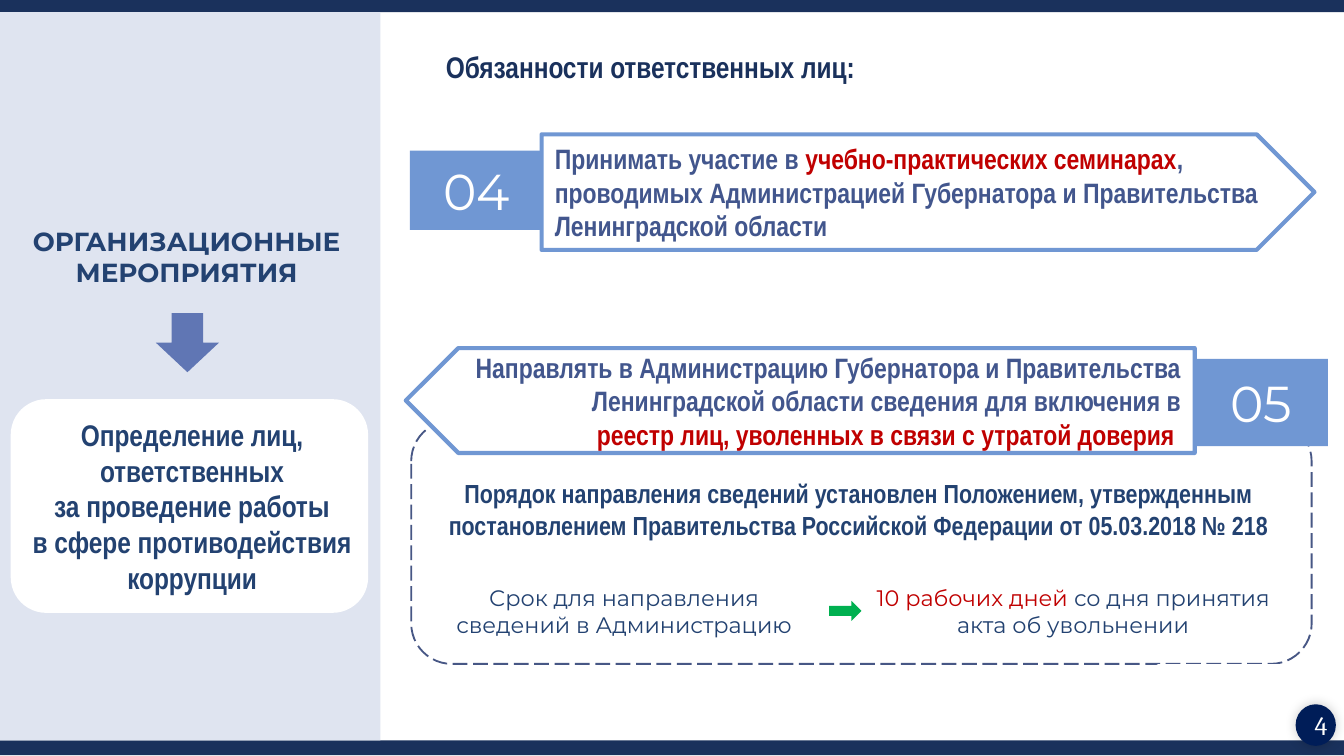
from lxml.etree import SubElement
from pptx import Presentation
from pptx.dml.color import RGBColor
from pptx.enum.dml import MSO_LINE
from pptx.enum.shapes import MSO_SHAPE as SHAPE
from pptx.enum.text import MSO_ANCHOR as ANCHOR, PP_ALIGN as ALIGN
from pptx.oxml.ns import qn
from pptx.util import Inches, Pt

COLORS = {
    "navy": "1A315C", "panel": "DFE4F0", "white": "FFFFFF", "blue": "7097D3",
    "text": "234271", "duty": "42568D", "red": "C00000", "dash": "475785",
    "green": "00B050", "arrow": "6076B4", "badge": "001D58", "black": "000000",
}
NARROW, MONTSERRAT = "Arial Narrow", "Montserrat"


def add_shape(kind, box, fill=None, line=None, width=1):
    shape = slide.shapes.add_shape(kind, *[Inches(value) for value in box])
    shape.shadow.inherit = False
    if fill:
        shape.fill.solid()
        shape.fill.fore_color.rgb = RGBColor.from_string(COLORS[fill])
    else:
        shape.fill.background()
    if line:
        shape.line.color.rgb = RGBColor.from_string(COLORS[line])
        shape.line.width = Pt(width)
    else:
        shape.line.fill.background()
    return shape


def write(shape, runs, size, font=NARROW, bold=False, align=ALIGN.CENTER,
          anchor=ANCHOR.MIDDLE, inset=(0.1, 0.05)):
    frame = shape.text_frame
    side, edge = Inches(inset[0]), Inches(inset[1])
    frame_format = {"word_wrap": True, "vertical_anchor": anchor,
                    "margin_left": side, "margin_right": side,
                    "margin_top": edge, "margin_bottom": edge}
    for name, value in frame_format.items():
        setattr(frame, name, value)
    paragraph = frame.paragraphs[0]
    paragraph.alignment = align
    for text, color in runs:
        for index, part in enumerate(text.split("\n")):
            if index:
                paragraph.add_line_break()
            if not part:
                continue
            run = paragraph.add_run()
            run.text = part
            for name, value in {"size": Pt(size), "name": font, "bold": bold}.items():
                setattr(run.font, name, value)
            run.font.color.rgb = RGBColor.from_string(COLORS[color])


# Widescreen page, 16:9
presentation = Presentation()
presentation.slide_width = Inches(10)
presentation.slide_height = Inches(10) * 9 // 16
slide = presentation.slides.add_slide(presentation.slide_layouts[5])

# Top and bottom bars, dashed frame, left panel
for top in (-0.02, 5.51):
    add_shape(SHAPE.RECTANGLE, (0, top, 10, 0.11), "navy")
frame_shape = add_shape(SHAPE.ROUNDED_RECTANGLE, (3.06, 3.13, 6.7, 1.81), line="dash")
frame_shape.line.dash_style = MSO_LINE.LONG_DASH
add_shape(SHAPE.RECTANGLE, (-0.01, 0.09, 2.84, 5.42), "panel")

# Title
title = slide.shapes.title
title_box = {"left": 2.83, "top": 0.37, "width": 4.02, "height": 0.31}
for name, value in title_box.items():
    setattr(title, name, Inches(value))
write(title, [("Обязанности ответственных лиц:", "navy")], 16, bold=True,
      anchor=ANCHOR.BOTTOM)

# Left panel: heading, arrow, topic
add_shape(SHAPE.ROUNDED_RECTANGLE, (0.08, 2.97, 2.66, 1.59), "white")
add_shape(SHAPE.DOWN_ARROW, (1.16, 2.33, 0.47, 0.44), "arrow")

topic = ("Определение лиц, ответственных\nза проведение работы\n"
         "в сфере противодействия коррупции")
procedure = ("Порядок направления сведений установлен Положением, утвержденным "
             "постановлением Правительства Российской Федерации от 05.03.2018 № 218")
text_boxes = [
    ((0.06, 0.69, 2.66, 2.44), "ОРГАНИЗАЦИОННЫЕ МЕРОПРИЯТИЯ", 14, MONTSERRAT, ANCHOR.MIDDLE),
    ((0.1, 2.97, 2.66, 1.59), topic, 16, NARROW, ANCHOR.MIDDLE),
    ((3.02, 3.6, 6.74, 0.47), procedure, 14, NARROW, ANCHOR.BOTTOM),
]
for box, text, size, font, anchor in text_boxes:
    text_box = slide.shapes.add_textbox(*[Inches(value) for value in box])
    write(text_box, [(text, "text")], size, font, bold=True, anchor=anchor)

# White patch over the lower right corner of the frame
add_shape(SHAPE.RECTANGLE, (8.62, 4.96, 0.99, 0.43), "white", "white", 2.25)

# Numbered duties
duties = [
    ("04", (3.05, 1.12, 0.99, 0.59), (4.03, 1, 5.75, 0.86), ALIGN.LEFT,
     [("Принимать участие в ", "duty"),
      ("учебно-практических семинарах", "red"),
      (", проводимых Администрацией Губернатора и Правительства "
       "Ленинградской области", "duty")]),
    ("05", (8.89, 2.67, 0.99, 0.65), (3.02, 2.59, 5.87, 0.78), ALIGN.RIGHT,
     [("Направлять в Администрацию Губернатора и Правительства "
       "Ленинградской области сведения для включения в\n", "duty"),
      ("реестр лиц, уволенных в связи с утратой доверия ", "red")]),
]
for number, number_box, banner_box, align, runs in duties:
    number_shape = add_shape(SHAPE.RECTANGLE, number_box, "blue")
    write(number_shape, [(number, "white")], 27, MONTSERRAT, inset=(0.07, 0.04))
    banner = add_shape(SHAPE.PENTAGON, banner_box, "white", "blue", 2.25)
    if align == ALIGN.RIGHT:
        banner.element.spPr.find(qn("a:xfrm")).set("flipH", "1")
    write(banner, runs, 15, bold=True, align=align)

# Deadline row
deadline = [
    ((3.15, 4.23, 2.99, 0.64),
     [("Срок для направления сведений в Администрацию", "text")]),
    ((6.39, 4.23, 3.19, 0.64),
     [("10 рабочих дней ", "red"), ("со дня принятия акта об увольнении", "text")]),
]
for box, runs in deadline:
    write(add_shape(SHAPE.ROUNDED_RECTANGLE, box), runs, 12, MONTSERRAT, inset=(0.05, 0.05))
add_shape(SHAPE.RIGHT_ARROW, (6.17, 4.47, 0.24, 0.15), "green")

# Page number with a soft shadow
badge = add_shape(SHAPE.OVAL, (9.64, 5.24, 0.3, 0.31), "badge")
write(badge, [("4", "white")], 14, "Cambria")
effects = badge.element.spPr.find(qn("a:effectLst"))
shadow = SubElement(effects, qn("a:outerShdw"), blurRad=str(Pt(6)), dist="0",
                    dir=str(225 * 60000))
shadow_color = SubElement(shadow, qn("a:srgbClr"), val=COLORS["black"])
SubElement(shadow_color, qn("a:alpha"), val="20000")

presentation.save("out.pptx")
